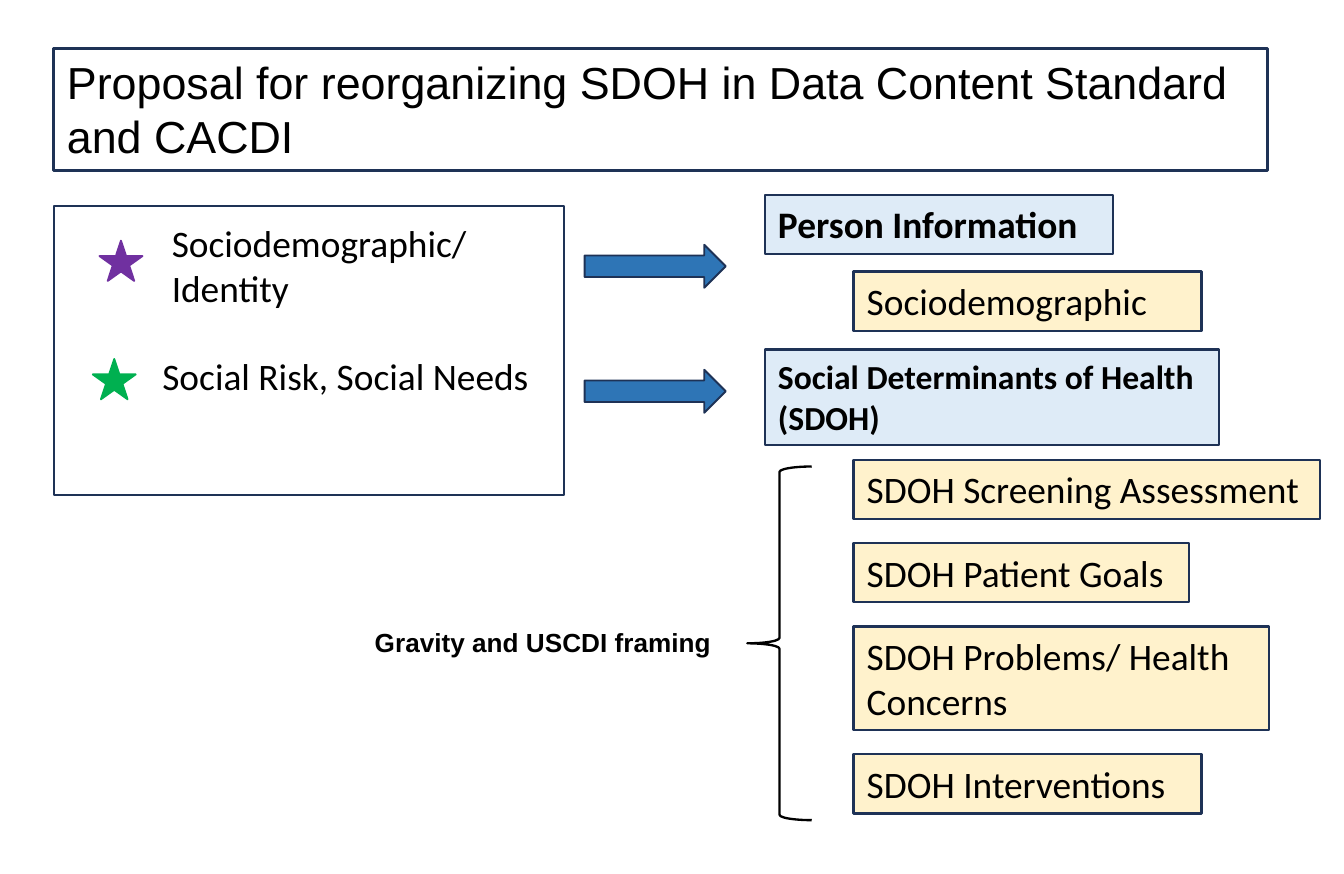
from pptx import Presentation
from pptx.dml.color import RGBColor
from pptx.enum.shapes import MSO_SHAPE
from pptx.enum.text import MSO_ANCHOR, MSO_AUTO_SIZE, PP_ALIGN
from pptx.util import Inches, Pt

NAVY, BLUE, PALE, CREAM = "1E3256", "2E75B6", "DEEBF7", "FFF2CC"
BLACK, PURPLE, GREEN = "000000", "7030A0", "00B050"


def color(code):
    return RGBColor.from_string(code)


class Board:
    frame = {
        "word_wrap": True,
        "auto_size": MSO_AUTO_SIZE.SHAPE_TO_FIT_TEXT,
        "vertical_anchor": MSO_ANCHOR.TOP,
    }
    font = {"name": "Calibri", "size": 20, "bold": False}

    def __init__(self, slide):
        self.slide = slide

    def letter(self, item, text, after=0, **style):
        for key, value in self.frame.items():
            setattr(item.text_frame, key, value)
        para = item.text_frame.paragraphs[0]
        para.alignment = PP_ALIGN.LEFT
        para.space_after = Pt(after)
        run = para.add_run()
        run.text = text
        look = {**self.font, **style}
        look["size"] = Pt(look["size"])
        for key, value in look.items():
            setattr(run.font, key, value)
        run.font.color.rgb = color(BLACK)

    def shape(self, kind, spot, fill=None, line=NAVY, width=1):
        item = self.slide.shapes.add_shape(kind, *map(Inches, spot))
        item.shadow.inherit = False
        if fill:
            item.fill.solid()
            item.fill.fore_color.rgb = color(fill)
        else:
            item.fill.background()
        item.line.color.rgb = color(line)
        item.line.width = Pt(width)
        return item

    def box(self, text, spot, fill=None, width=1.25, **style):
        item = self.shape(MSO_SHAPE.RECTANGLE, spot, fill, NAVY, width)
        self.letter(item, text, **style)

    def label(self, text, spot, **style):
        item = self.slide.shapes.add_textbox(*map(Inches, spot))
        self.letter(item, text, **style)

    def star(self, left, top, fill):
        self.shape(MSO_SHAPE.STAR_5_POINT, (left, top, 0.32, 0.3), fill, fill)

    def arrow(self, top):
        self.shape(MSO_SHAPE.RIGHT_ARROW, (4.35, top, 1.05, 0.32), BLUE)


def main():
    deck = Presentation()
    deck.slide_width, deck.slide_height = Inches(10), Inches(6.5)
    board = Board(deck.slides.add_slide(deck.slide_layouts[6]))

    board.star(0.74, 1.79, PURPLE)
    board.label("Sociodemographic/ Identity", (1.18, 1.59, 3.03, 0.77), after=6)
    board.label("Social Risk, Social Needs", (1.11, 2.58, 3.03, 0.44), after=6)
    board.star(0.69, 2.67, GREEN)
    board.shape(MSO_SHAPE.RECTANGLE, (0.4, 1.53, 3.8, 2.15))

    board.box(
        "Proposal for reorganizing SDOH in Data Content Standard and CACDI",
        (0.4, 0.36, 9.03, 0.91), width=1.5, name="Arial", size=24,
    )
    for top in (1.82, 2.75):
        board.arrow(top)

    board.box("Person Information", (5.69, 1.45, 2.59, 0.44), PALE, bold=True)
    board.box("Sociodemographic", (6.35, 2.02, 2.59, 0.44), CREAM)
    board.box(
        "Social Determinants of Health (SDOH)",
        (5.69, 2.6, 3.38, 0.71), PALE, size=18, bold=True,
    )

    topics = [
        ("SDOH Screening Assessment", 3.47, 0.44),
        ("SDOH Patient Goals", 2.5, 0.44),
        ("SDOH Problems/ Health Concerns", 3.09, 0.77),
        ("SDOH Interventions", 2.59, 0.44),
    ]
    top, gap = 3.42, 0.18
    for text, wide, high in topics:
        board.box(text, (6.35, top, wide, high), CREAM)
        top += high + gap

    board.shape(MSO_SHAPE.LEFT_BRACE, (5.56, 3.47, 0.48, 2.63), None, BLACK, 1.25)
    board.label(
        "Gravity and USCDI framing", (2.69, 4.61, 5, 0.34),
        name="Arial", size=14, bold=True,
    )
    deck.save("out.pptx")


if __name__ == "__main__":
    main()
